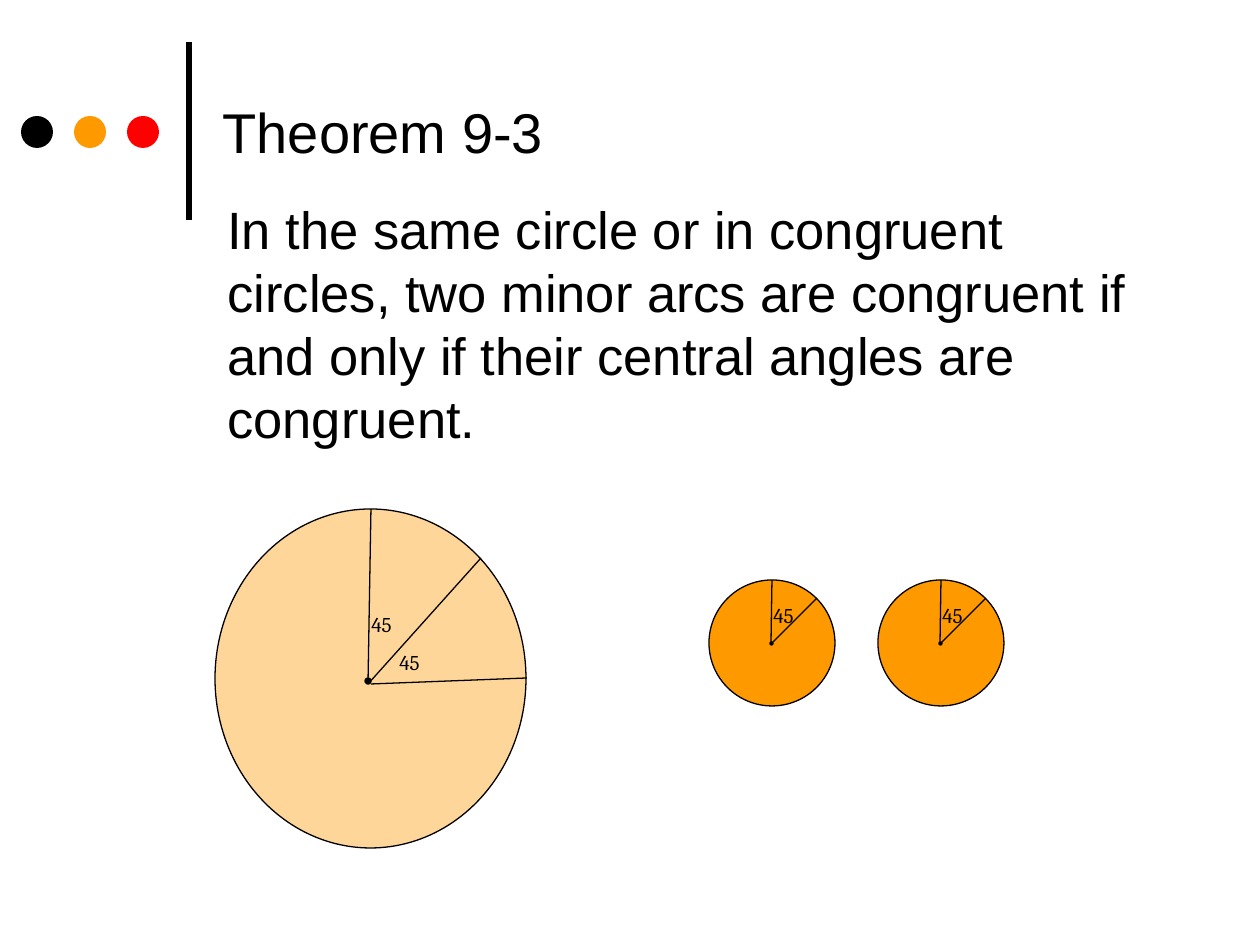
import pptx
import pptx.util
import pptx.dml.color
import pptx.enum.shapes
import pptx.enum.text
import lxml.etree

PX = 914400 / 126


def px(*values):
    return [pptx.util.Emu(round(v * PX)) for v in values]


def rgb(value):
    return pptx.dml.color.RGBColor.from_string(value)


def write(sp, text, size, font, anchor="TOP", spacing=None, fit="NONE"):
    tf = sp.text_frame
    tf.word_wrap = True
    tf.auto_size = getattr(pptx.enum.text.MSO_AUTO_SIZE, fit)
    tf.vertical_anchor = getattr(pptx.enum.text.MSO_ANCHOR, anchor)
    p = tf.paragraphs[0]
    p.alignment = pptx.enum.text.PP_ALIGN.LEFT
    if spacing:
        p.line_spacing = pptx.util.Pt(spacing)
    r = p.add_run()
    r.text = text
    r.font.size = pptx.util.Pt(size)
    r.font.name = font
    r.font.color.rgb = rgb("000000")


prs = pptx.Presentation()
prs.slide_width, prs.slide_height = px(1260, 945)
s = prs.slides.add_slide(prs.slide_layouts[5])

title = s.shapes.title
title.left, title.top, title.width, title.height = px(210, 26, 966, 210)
write(title, "Theorem 9-3", 32, "Arial", anchor="MIDDLE")

body = s.shapes.add_textbox(*px(215, 191, 966, 282))
write(body, "In the same circle or in congruent circles, two minor arcs are congruent "
      "if and only if their central angles are congruent.", 30, "Arial", spacing=36)

pair = s.shapes.add_group_shape().shapes
large = s.shapes.add_group_shape().shapes

ellipses = [(s.shapes, 21 + 53 * i, 116, 32, 32, color, 0)
            for i, color in enumerate(["000000", "FF9900", "FF0000"])]
ellipses += [(large, 215, 509, 311, 339, "FFD699", 0.75),
             (large, 365, 678, 6, 6, "000000", 0.75)]
lines = [(s.shapes, 189, 220, 189, 42, 3),
         (large, 368, 684, 371, 509, 0.75),
         (large, 368, 684, 481, 558, 0.75),
         (large, 371, 684, 527, 678, 0.75)]
labels = [(large, 359, 605, 66, 49), (large, 387, 643, 66, 49)]

for x in (709, 878):
    ellipses += [(pair, x, 580, 126, 126, "FF9900", 0.75),
                 (pair, x + 61, 642, 3, 3, "000000", 0.75)]
    lines += [(pair, x + 62, 644, x + 63, 580, 0.75),
              (pair, x + 62, 644, x + 108, 598, 0.75)]
    labels.append((pair, x + 52, 596, 49, 38))

for shapes, x, y, w, h, color, weight in ellipses:
    sp = shapes.add_shape(pptx.enum.shapes.MSO_SHAPE.OVAL, *px(x, y, w, h))
    sp.shadow.inherit = False
    sp.fill.solid()
    sp.fill.fore_color.rgb = rgb(color)
    if weight:
        sp.line.color.rgb = rgb("000000")
        sp.line.width = pptx.util.Pt(weight)
    else:
        sp.line.fill.background()

for shapes, x1, y1, x2, y2, weight in lines:
    line = shapes.add_connector(pptx.enum.shapes.MSO_CONNECTOR.STRAIGHT, *px(x1, y1, x2, y2))
    line.line.color.rgb = rgb("000000")
    line.line.width = pptx.util.Pt(weight)
    lxml.etree.SubElement(
        line._element.spPr, "{http://schemas.openxmlformats.org/drawingml/2006/main}effectLst")

for shapes, x, y, w, h in labels:
    write(shapes.add_textbox(*px(x, y, w, h)), "45", 12, "Cambria", fit="SHAPE_TO_FIT_TEXT")

prs.save("out.pptx")
